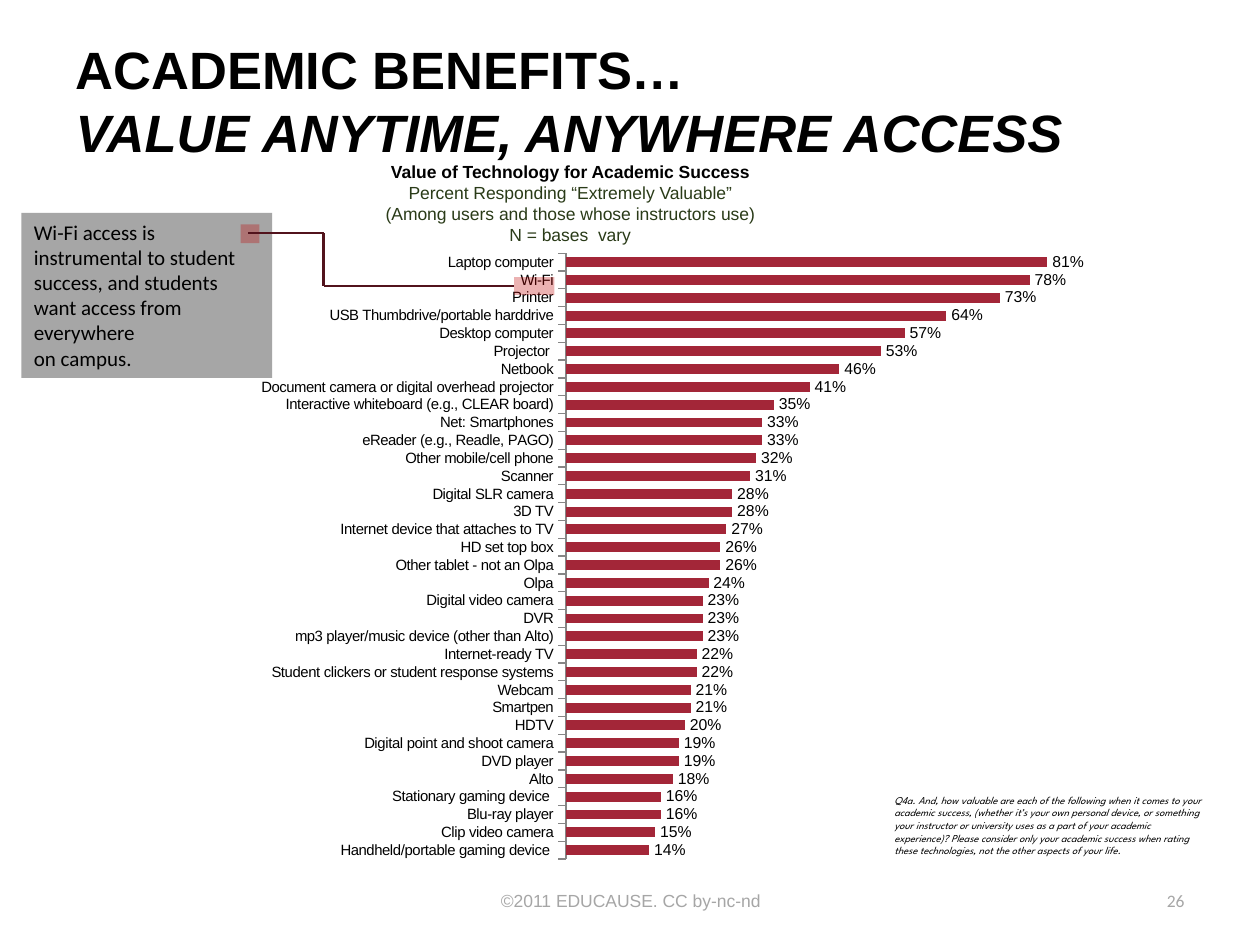
from lxml import etree
from pptx import Presentation
from pptx.chart.data import CategoryChartData
from pptx.dml.color import RGBColor
from pptx.enum.chart import XL_CHART_TYPE, XL_LABEL_POSITION, XL_TICK_LABEL_POSITION, XL_TICK_MARK
from pptx.enum.shapes import MSO_CONNECTOR, MSO_SHAPE
from pptx.enum.text import MSO_ANCHOR, MSO_AUTO_SIZE, PP_ALIGN
from pptx.oxml import parse_xml
from pptx.oxml.ns import nsdecls, qn
from pptx.util import Inches, Pt

BAR = XL_CHART_TYPE.BAR_CLUSTERED
OUTSIDE_END = XL_LABEL_POSITION.OUTSIDE_END
LABELS_LOW = XL_TICK_LABEL_POSITION.LOW
TICK_OUT, TICK_NONE = XL_TICK_MARK.OUTSIDE, XL_TICK_MARK.NONE
STRAIGHT, RECTANGLE = MSO_CONNECTOR.STRAIGHT, MSO_SHAPE.RECTANGLE
TOP, MIDDLE = MSO_ANCHOR.TOP, MSO_ANCHOR.MIDDLE
LEFT, CENTER, RIGHT = PP_ALIGN.LEFT, PP_ALIGN.CENTER, PP_ALIGN.RIGHT
NO_FIT = MSO_AUTO_SIZE.NONE

BLACK = RGBColor(0x00, 0x00, 0x00)
GRAY = RGBColor(0xA6, 0xA6, 0xA6)
AXIS_GRAY = RGBColor(0x86, 0x86, 0x86)
GREEN = RGBColor(0x2A, 0x3B, 0x18)
CRIMSON = RGBColor(0xA3, 0x26, 0x38)
MAROON = RGBColor(0x52, 0x13, 0x1C)
RED = RGBColor(0xC0, 0x00, 0x00)

# The page is a grid of 100 columns by 75 rows, each cell a tenth of an inch
CELL = Inches(0.1)

VALUES = [
    ("Laptop computer", 81), ("Wi-Fi", 78), ("Printer", 73),
    ("USB Thumbdrive/portable harddrive", 64), ("Desktop computer", 57),
    ("Projector ", 53), ("Netbook", 46),
    ("Document camera or digital overhead projector", 41),
    ("Interactive whiteboard (e.g., CLEAR board)", 35),
    ("Net: Smartphones", 33), ("eReader (e.g., Readle, PAGO)", 33),
    ("Other mobile/cell phone", 32), ("Scanner", 31),
    ("Digital SLR camera", 28), ("3D TV", 28),
    ("Internet device that attaches to TV", 27), ("HD set top box", 26),
    ("Other tablet - not an Olpa", 26), ("Olpa", 24),
    ("Digital video camera", 23), ("DVR", 23),
    ("mp3 player/music device (other than Alto)", 23),
    ("Internet-ready TV", 22),
    ("Student clickers or student response systems", 22),
    ("Webcam", 21), ("Smartpen", 21), ("HDTV", 20),
    ("Digital point and shoot camera", 19), ("DVD player", 19), ("Alto", 18),
    ("Stationary gaming device ", 16), ("Blu-ray player", 16),
    ("Clip video camera", 15), ("Handheld/portable gaming device ", 14),
]
QUESTION = (
    "Q4a. And, how valuable are each of the following when it comes to your "
    "academic success, (whether it’s your own personal device, or something "
    "your instructor or university uses as a part of your academic "
    "experience)? Please consider only your academic success when rating "
    "these technologies, not the other aspects of your life."
)


def grid(*cells):
    return [round(cell * CELL) for cell in cells]


def set_font(font, color, **formats):
    for name, value in formats.items():
        setattr(font, name, value)
    font.color.rgb = color


def write(shape, lines, align=LEFT, anchor=TOP):
    """Fill a shape with paragraphs given as (text, colour, font formats)."""
    frame = shape.text_frame
    frame.word_wrap = True
    frame.auto_size = NO_FIT
    frame.vertical_anchor = anchor
    for index, (text, color, formats) in enumerate(lines):
        para = frame.add_paragraph() if index else frame.paragraphs[0]
        para.text = text
        para.alignment = align
        for span in para.runs:
            set_font(span.font, color, **formats)


def add_text(page, box, lines, **layout):
    write(page.shapes.add_textbox(*grid(*box)), lines, **layout)


def add_rectangle(page, box, color, opacity=100):
    shape = page.shapes.add_shape(RECTANGLE, *grid(*box))
    shape.shadow.inherit = False
    shape.fill.solid()
    shape.fill.fore_color.rgb = color
    shape.line.fill.background()
    if opacity < 100:
        tint = shape.fill._xPr.find(".//" + qn("a:srgbClr"))
        etree.SubElement(tint, qn("a:alpha"), val=str(opacity * 1000))
    return shape


def add_line(page, start, end):
    line = page.shapes.add_connector(STRAIGHT, *grid(*start, *end))
    line.line.color.rgb = MAROON
    line.line.width = Pt(1.5)
    etree.SubElement(line._element.spPr, qn("a:effectLst"))
    return line


def add_title(page, box):
    title = page.shapes.title
    title.left, title.top, title.width, title.height = grid(*box)
    write(title, [("ACADEMIC BENEFITS…\vVALUE ANYTIME, ANYWHERE ACCESS", BLACK,
                   dict(name="Arial", size=Pt(30), bold=True))], anchor=MIDDLE)
    title.text_frame.paragraphs[0].runs[-1].font.italic = True


def add_value_chart(page, box):
    data = CategoryChartData(number_format="0%")
    data.categories = [name for name, _ in VALUES]
    data.add_series("Series 1", [percent / 100 for _, percent in VALUES])
    chart = page.shapes.add_chart(BAR, *grid(*box), data).chart
    chart.has_legend = chart.has_title = False
    set_font(chart.font, BLACK, name="Calibri", size=Pt(18))

    plot = chart.plots[0]
    plot.gap_width = 80
    plot.vary_by_categories = False
    bars = plot.series[0].format.fill
    bars.solid()
    bars.fore_color.rgb = CRIMSON
    plot.has_data_labels = True
    labels = plot.data_labels
    labels.show_value = True
    labels.number_format, labels.number_format_is_linked = "0%", False
    labels.position = OUTSIDE_END
    set_font(labels.font, BLACK, name="Arial", size=Pt(9))

    names = chart.category_axis
    names.reverse_order = True
    names.has_major_gridlines = False
    names.major_tick_mark, names.minor_tick_mark = TICK_OUT, TICK_NONE
    names.tick_label_position = LABELS_LOW
    names.format.line.color.rgb = AXIS_GRAY
    set_font(names.tick_labels.font, BLACK, name="Arial", size=Pt(8.5))
    names.tick_labels.font._element.set("spc", "-10")

    scale = chart.value_axis
    scale.minimum_scale, scale.maximum_scale = 0, 1
    scale.has_major_gridlines = False
    scale.visible = False

    # Fixed plot area, as shares of the chart
    shares = dict(x=0.35, y=0.02, w=0.63, h=0.96)
    sizes = "".join(f'<c:{key} val="{share}"/>' for key, share in shares.items())
    area = chart._chartSpace.chart.plotArea
    for old in area.findall(qn("c:layout")):
        area.remove(old)
    area.insert(0, parse_xml(
        f'<c:layout {nsdecls("c")}><c:manualLayout><c:layoutTarget val="inner"/>'
        f'<c:xMode val="edge"/><c:yMode val="edge"/>{sizes}'
        '</c:manualLayout></c:layout>'))


def add_chart_heading(page, box):
    plain = dict(name="Arial", size=Pt(10))
    add_text(page, box, [
        ("Value of Technology for Academic Success", BLACK, dict(plain, bold=True)),
        ("Percent Responding “Extremely Valuable”\v"
         "(Among users and those whose instructors use)", GREEN, plain),
        ("N = bases  vary", GREEN, plain),
    ], align=CENTER)


def add_callout(page, box):
    left, top, width, height = box
    note = add_rectangle(page, box, GRAY)
    write(note, [("Wi-Fi access is instrumental to student success, and students "
                  "want access from everywhere \von campus.", BLACK,
                  dict(name="Calibri", size=Pt(12)))])
    # Markers on the note and on the Wi-Fi label, with a stepped line between
    add_rectangle(page, (left + 17.4, top + 0.9, 1.5, 1.5), RED, opacity=30)
    label = add_rectangle(page, (left + 39.1, top + 5.1, 3.2, 1.4), RED, opacity=30)
    bend, start_row, end_row = left + 24, top + 1.6, top + 5.8
    add_line(page, (left + 18, start_row), (bend, start_row))
    add_line(page, (bend, start_row), (bend, end_row))
    add_line(page, (bend, end_row), (left + 39.1, end_row)).end_connect(label, 1)


def add_footer(page, top, height):
    add_text(page, (34.2, top, 31.7, height),
             [("©2011 EDUCAUSE. CC by-nc-nd", GRAY, dict(name="Arial", size=Pt(10)))],
             align=CENTER, anchor=MIDDLE)
    add_text(page, (71.7, top, 23.3, height),
             [("26", GRAY, dict(name="Calibri", size=Pt(10)))],
             align=RIGHT, anchor=MIDDLE)


def main():
    deck = Presentation()
    deck.slide_width, deck.slide_height = grid(100, 75)
    page = deck.slides.add_slide(deck.slide_layouts[5])
    add_title(page, (5, 1.7, 91.7, 12.5))
    add_footer(page, 69.5, 4)
    add_text(page, (70, 62.5, 26.7, 7.1),
             [(QUESTION, BLACK, dict(name="League Spartan", size=Pt(6), italic=True))])
    add_value_chart(page, (18.7, 19.1, 74.9, 50.1))
    add_chart_heading(page, (16.9, 12.3, 56.7, 11.1))
    add_callout(page, (1.7, 16.9, 19.9, 13.1))
    deck.save("out.pptx")


if __name__ == "__main__":
    main()
